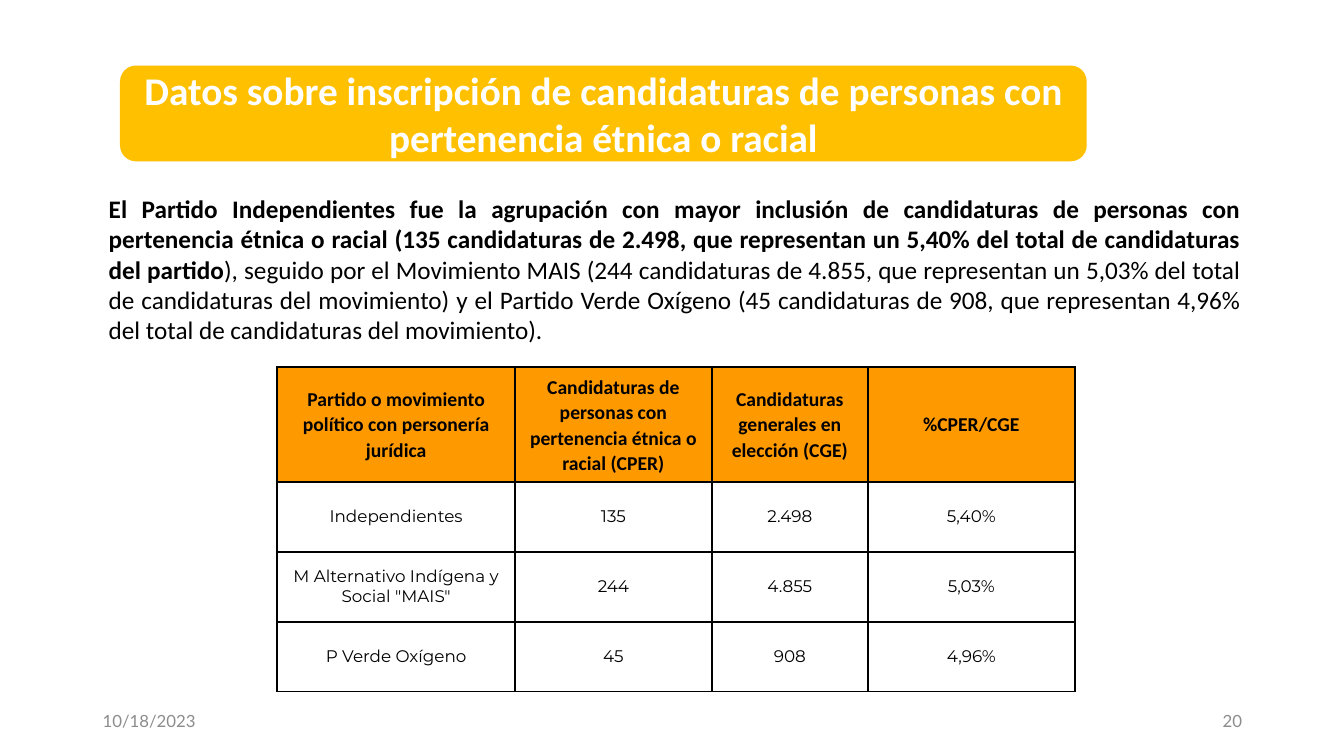
import pptx
import pptx.dml.color
import pptx.enum.shapes
import pptx.enum.text
import pptx.oxml
import pptx.oxml.ns
import pptx.util

RGBColor = pptx.dml.color.RGBColor
ALIGN = pptx.enum.text.PP_ALIGN
MIDDLE = pptx.enum.text.MSO_ANCHOR.MIDDLE

BLACK = RGBColor(0x00, 0x00, 0x00)
WHITE = RGBColor(0xFF, 0xFF, 0xFF)
GRAY = RGBColor(0x8C, 0x8C, 0x8C)
AMBER = RGBColor(0xFF, 0xC0, 0x00)
ORANGE = RGBColor(0xFF, 0x99, 0x00)

TITLE = dict(name="Calibri", size=pptx.util.Pt(28), bold=True, color=WHITE)
BODY = dict(name="Calibri", size=pptx.util.Pt(18), bold=False, color=BLACK)
BODY_STRONG = dict(BODY, bold=True)
HEADER = dict(name="Calibri", size=pptx.util.Pt(14), bold=True, color=BLACK)
CELL = dict(name="Montserrat", size=pptx.util.Pt(12), bold=False, color=BLACK)
FOOTER = dict(name="Lato", size=pptx.util.Pt(12), bold=False, color=GRAY)

CENTERED = dict(alignment=ALIGN.CENTER)
HEADER_SPACING = dict(CENTERED, line_spacing=1.07, space_after=pptx.util.Pt(8))

SUMMARY = [
    ("El Partido Independientes fue la agrupación con mayor inclusión de "
     "candidaturas de personas con pertenencia étnica o racial (135 candidaturas "
     "de 2.498, que representan un 5,40% del total de candidaturas del partido",
     BODY_STRONG),
    ("), seguido por el Movimiento MAIS (244 candidaturas de 4.855, que "
     "representan un 5,03% del total de candidaturas del movimiento) y el Partido "
     "Verde Oxígeno (45 candidaturas de 908, que representan 4,96% del total de "
     "candidaturas del movimiento).", BODY),
]
CANDIDACIES = [
    ("Partido o movimiento político con personería jurídica",
     "Candidaturas de personas con pertenencia étnica o racial (CPER)",
     "Candidaturas generales en elección (CGE)", "%CPER/CGE"),
    ("Independientes", "135", "2.498", "5,40%"),
    ('M Alternativo Indígena y Social "MAIS"', "244", "4.855", "5,03%"),
    ("P Verde Oxígeno", "45", "908", "4,96%"),
]


def set_attributes(target, values):
    for key, value in values.items():
        setattr(target, key, value)


class SlideBuilder:
    """Places elements by percentages of the slide's width and height."""

    def __init__(self, deck):
        self.deck = deck
        self.slide = deck.slides.add_slide(deck.slide_layouts[6])

    def across(self, percent):
        return round(self.deck.slide_width * percent / 100)

    def down(self, percent):
        return round(self.deck.slide_height * percent / 100)

    def box(self, left, top, width, height):
        return (self.across(left), self.down(top),
                self.across(width), self.down(height))

    def fill_text(self, frame, runs, layout):
        paragraph = frame.paragraphs[0]
        set_attributes(paragraph, layout)
        for words, style in runs:
            run = paragraph.add_run()
            run.text = words
            set_attributes(run.font, {k: v for k, v in style.items() if k != "color"})
            run.font.color.rgb = style["color"]

    def text(self, place, runs, layout, **frame_format):
        frame = self.slide.shapes.add_textbox(*self.box(*place)).text_frame
        set_attributes(frame, dict(word_wrap=True, **frame_format))
        self.fill_text(frame, runs, layout)

    def banner(self, place, words):
        banner = self.slide.shapes.add_shape(
            pptx.enum.shapes.MSO_SHAPE.ROUNDED_RECTANGLE, *self.box(*place))
        banner.shadow.inherit = False
        banner.fill.solid()
        banner.fill.fore_color.rgb = AMBER
        banner.line.fill.background()
        set_attributes(banner.text_frame, dict(word_wrap=True, vertical_anchor=MIDDLE))
        self.fill_text(banner.text_frame, [(words, TITLE)], CENTERED)

    def border(self, cell):
        properties = cell._tc.get_or_add_tcPr()
        for position, side in enumerate(("lnL", "lnR", "lnT", "lnB")):
            properties.insert(position, pptx.oxml.parse_xml(
                f'<a:{side} {pptx.oxml.ns.nsdecls("a")} w="{pptx.util.Pt(1.5)}">'
                f'<a:solidFill><a:srgbClr val="{BLACK}"/></a:solidFill></a:{side}>'))

    def table(self, left, top, columns, rows, content):
        place = self.box(left, top, sum(columns), sum(rows))
        table = self.slide.shapes.add_table(len(rows), len(columns), *place).table
        for column, width in zip(table.columns, columns):
            column.width = self.across(width)
        for row, height in zip(table.rows, rows):
            row.height = self.down(height)
        margins = ("margin_left", "margin_right", "margin_top", "margin_bottom")
        cell_format = dict.fromkeys(margins, pptx.util.Inches(0.07))
        cell_format["vertical_anchor"] = MIDDLE
        for r, values in enumerate(content):
            style, layout = (CELL, CENTERED) if r else (HEADER, HEADER_SPACING)
            for c, words in enumerate(values):
                cell = table.cell(r, c)
                set_attributes(cell, cell_format)
                if r:
                    cell.fill.background()
                else:
                    cell.fill.solid()
                    cell.fill.fore_color.rgb = ORANGE
                self.border(cell)
                self.fill_text(cell.text_frame, [(words, style)], layout)


def main():
    deck = pptx.Presentation()
    deck.slide_width = pptx.util.Inches(13.33)
    deck.slide_height = pptx.util.Inches(7.5)
    page = SlideBuilder(deck)
    for left, words, side in ((6.9, "10/18/2023", ALIGN.LEFT),
                              (70.65, "20", ALIGN.RIGHT)):
        page.text((left, 92.67, 22.5, 5.33), [(words, FOOTER)],
                  dict(alignment=side), vertical_anchor=MIDDLE)
    page.text((7.35, 24.93, 85.73, 21.6), SUMMARY, dict(alignment=ALIGN.JUSTIFY),
              auto_size=pptx.enum.text.MSO_AUTO_SIZE.SHAPE_TO_FIT_TEXT)
    page.banner((8.93, 8.67, 71.93, 12.67),
                "Datos sobre inscripción de candidaturas de personas con "
                "pertenencia étnica o racial")
    page.table(20.63, 48.53, columns=(17.7, 14.63, 11.63, 15.38),
               rows=(15.2, 9.25, 9.25, 9.25), content=CANDIDACIES)
    deck.save("out.pptx")


if __name__ == "__main__":
    main()
